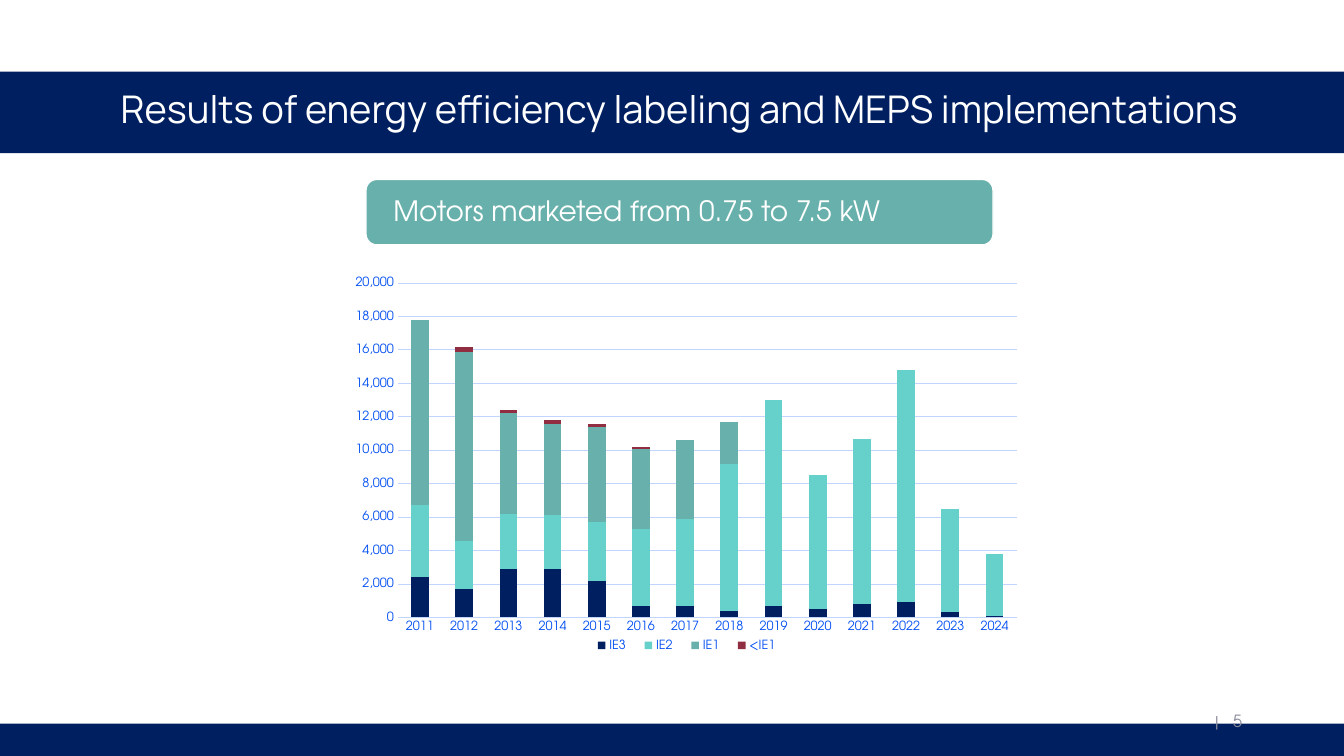
from typing import NamedTuple, Optional

from lxml.etree import SubElement
from pptx import Presentation
from pptx.chart.data import CategoryChartData
from pptx.dml.color import RGBColor
from pptx.enum.chart import XL_CHART_TYPE as ChartType, XL_LEGEND_POSITION as LegendPosition
from pptx.enum.chart import XL_TICK_MARK as TickMark
from pptx.enum.shapes import MSO_SHAPE as Preset
from pptx.enum.text import MSO_ANCHOR as Anchor, MSO_AUTO_SIZE as AutoSize, PP_ALIGN as Align
from pptx.oxml.ns import qn
from pptx.util import Inches, Pt

COLORS = {
    "navy": "001F60", "white": "FFFFFF", "teal": "68B0AB", "aqua": "66D1CA",
    "wine": "902D41", "blue": "004EF1", "pale blue": "C1D5FF", "grey": "8C8D9D",
}
TITLE_FONT, BODY_FONT = "Manrope", "TeX Gyre Adventor"
SLIDE_WIDTH, SLIDE_HEIGHT = Inches(13.33), Inches(7.5)


class Area(NamedTuple):
    """A rectangle in percent of the slide's width and height."""
    left: float
    top: float
    width: float
    height: float

    def box(self) -> tuple:
        sides = (SLIDE_WIDTH, SLIDE_HEIGHT) * 2
        return tuple(round(side * share / 100) for side, share in zip(sides, self))


class MotorClass(NamedTuple):
    name: str
    color: str
    sales: list


TITLE_BAND = Area(0, 9.47, 100, 10.8)
FOOTER_BAND = Area(0, 95.73, 100, 4.27)
PAGE_NUMBER = Area(89.65, 92.67, 4.5, 5.33)
HEADING = Area(27.23, 23.73, 46.66, 8.67)
SALES_CHART = Area(25.51, 35.87, 51.16, 52.67)

YEARS = [str(year) for year in range(2011, 2025)]
MOTOR_CLASSES = [
    MotorClass("IE3", "navy", [2400, 1700, 2900, 2900, 2200, 700, 700,
                               400, 700, 500, 800, 900, 300, 100]),
    MotorClass("IE2", "aqua", [4300, 2900, 3300, 3200, 3500, 4600, 5200,
                               8800, 12300, 8000, 9900, 13900, 6200, 3700]),
    MotorClass("IE1", "teal", [11100, 11300, 6000, 5500, 5700, 4800, 4700, 2500] + [None] * 6),
    MotorClass("<IE1", "wine", [0, 300, 200, 200, 200, 100, 0] + [None] * 7),
]


def rgb(name: str) -> RGBColor:
    return RGBColor.from_string(COLORS[name])


def paint(part, color: str) -> None:
    part.fill.solid()
    part.fill.fore_color.rgb = rgb(color)


def set_font(font, size: float, color: str, name: str = BODY_FONT) -> None:
    font.size, font.name, font.bold = Pt(size), name, False
    font.color.rgb = rgb(color)


def write_text(shape, text: str, *, size: float, color: str, font: str = BODY_FONT,
               align=Align.LEFT, spacing: float = 1.0, after: float = 6,
               left: float = 0.1, right: float = 0.1, tab: Optional[float] = None) -> None:
    frame = shape.text_frame
    frame.auto_size, frame.word_wrap = AutoSize.NONE, True
    frame.vertical_anchor = Anchor.MIDDLE
    frame.margin_left, frame.margin_right = Inches(left), Inches(right)
    frame.text = text
    paragraph = frame.paragraphs[0]
    paragraph.alignment, paragraph.line_spacing = align, spacing
    paragraph.space_before, paragraph.space_after = Pt(0), Pt(after)
    if tab:
        stops = SubElement(paragraph._p.get_or_add_pPr(), qn("a:tabLst"))
        SubElement(stops, qn("a:tab"), pos=str(Inches(tab)), algn="l")
    set_font(paragraph.runs[0].font, size, color, font)


def add_panel(slide, preset, area: Area, fill: str, line: Optional[str] = None):
    panel = slide.shapes.add_shape(preset, *area.box())
    panel.shadow.inherit = False
    paint(panel, fill)
    if line:
        panel.line.color.rgb, panel.line.width = rgb(line), Pt(1)
    else:
        panel.line.fill.background()
    return panel


def fix_layout(element, x: float, y: float, w: float, h: float, inner: bool = False) -> None:
    """Place a plot area or legend by shares of the chart's size."""
    layout = element.find(qn("c:layout"))
    if layout is None:
        layout = SubElement(element, qn("c:layout"))
        anchor = element.find(qn("c:legendPos"))
        if anchor is None:
            element.insert(0, layout)
        else:
            anchor.addnext(layout)
    for child in list(layout):
        layout.remove(child)
    manual = SubElement(layout, qn("c:manualLayout"))
    settings = [("layoutTarget", "inner")] if inner else []
    settings += [("xMode", "edge"), ("yMode", "edge"), ("x", x), ("y", y), ("w", w), ("h", h)]
    for tag, value in settings:
        SubElement(manual, qn(f"c:{tag}"), val=str(value))


def style_axis(axis) -> None:
    axis.major_tick_mark = axis.minor_tick_mark = TickMark.NONE
    set_font(axis.tick_labels.font, 9, "blue")


def add_sales_chart(slide) -> None:
    data = CategoryChartData(number_format="#,##0")
    data.categories = YEARS
    for motor in MOTOR_CLASSES:
        data.add_series(motor.name, motor.sales)
    chart = slide.shapes.add_chart(ChartType.COLUMN_STACKED, *SALES_CHART.box(), data).chart
    chart.has_title = False
    set_font(chart.font, 10, "navy")

    plot = chart.plots[0]
    plot.gap_width, plot.overlap, plot.vary_by_categories = 150, 100, False
    for series, motor in zip(plot.series, MOTOR_CLASSES):
        paint(series.format, motor.color)

    years, sales = chart.category_axis, chart.value_axis
    style_axis(years)
    style_axis(sales)
    sales.minimum_scale, sales.maximum_scale, sales.major_unit = 0, 20000, 2000
    sales.tick_labels.number_format = "#,##0"
    sales.tick_labels.number_format_is_linked = False
    sales.format.line.fill.background()
    for line in (years.format.line, sales.major_gridlines.format.line):
        line.color.rgb, line.width = rgb("pale blue"), Pt(0.75)

    chart.has_legend = True
    chart.legend.position = LegendPosition.BOTTOM
    chart.legend.include_in_layout = False
    set_font(chart.legend.font, 9, "blue")
    plot_area = chart._chartSpace.chart.plotArea
    fix_layout(plot_area, 0.08, 0.03, 0.9, 0.84, inner=True)
    fix_layout(chart.legend._element, 0.35, 0.91, 0.3, 0.06)


def main() -> None:
    deck = Presentation()
    deck.slide_width, deck.slide_height = SLIDE_WIDTH, SLIDE_HEIGHT
    slide = deck.slides.add_slide(deck.slide_layouts[5])

    title = slide.shapes.title
    title.left, title.top, title.width, title.height = TITLE_BAND.box()
    paint(title, "navy")
    write_text(title, "Results of energy efficiency labeling and MEPS implementations",
               size=27.2, color="white", font=TITLE_FONT, align=Align.CENTER,
               spacing=0.8, left=0.25)

    add_panel(slide, Preset.RECTANGLE, FOOTER_BAND, "navy")
    page_number = slide.shapes.add_textbox(*PAGE_NUMBER.box())
    write_text(page_number, "|\t5", size=12, color="grey", tab=0.18)

    heading = add_panel(slide, Preset.ROUNDED_RECTANGLE, HEADING, "teal", line="white")
    write_text(heading, "Motors marketed from 0.75 to 7.5 kW", size=20, color="white",
               spacing=0.9, after=7, left=0.24, right=0.24)
    add_sales_chart(slide)
    deck.save("out.pptx")


if __name__ == "__main__":
    main()
